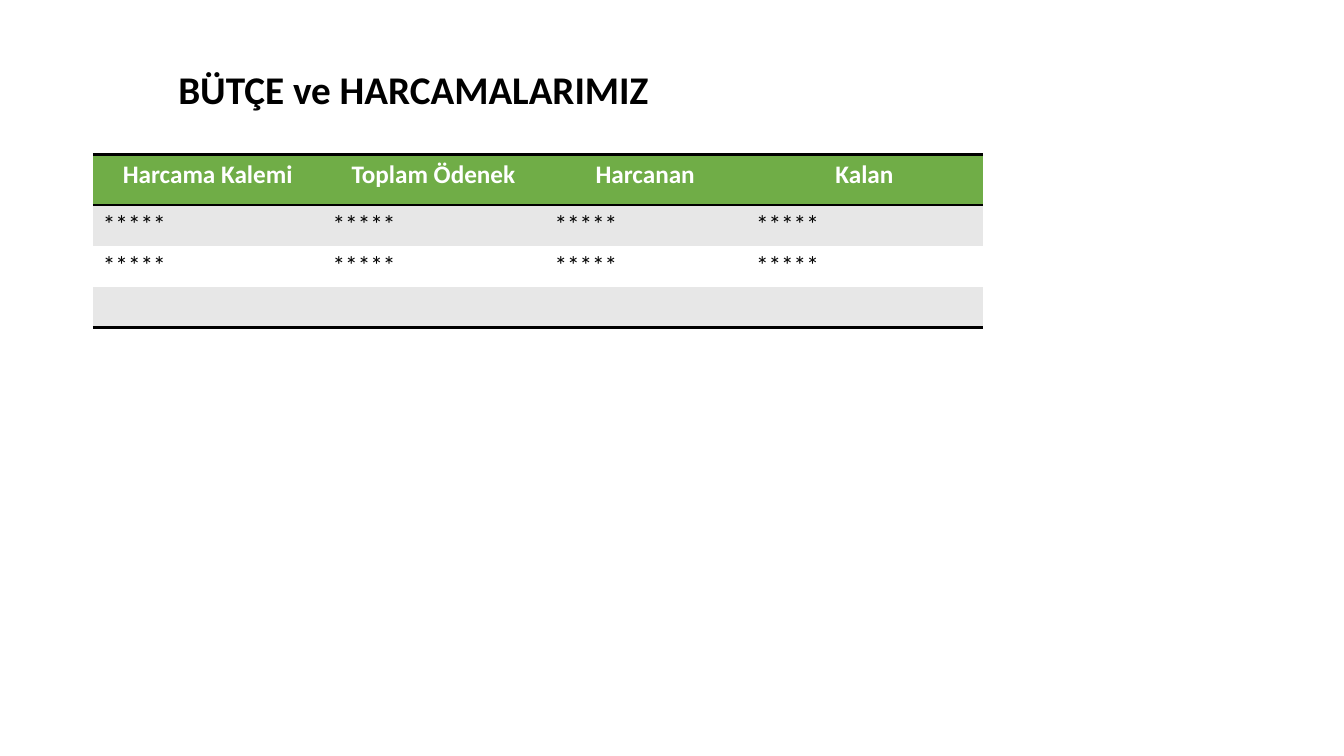
from lxml.etree import SubElement
from pptx import Presentation
from pptx.dml.color import RGBColor
from pptx.enum.text import MSO_ANCHOR, PP_ALIGN
from pptx.oxml.ns import qn
from pptx.util import Cm, Pt

BLACK = RGBColor(0x00, 0x00, 0x00)
WHITE = RGBColor(0xFF, 0xFF, 0xFF)
GREEN = RGBColor(0x70, 0xAD, 0x47)
GREY = RGBColor(0xE7, 0xE7, 0xE7)
FONT = "Calibri"


def set_font(p, size, color, bold):
    p.font.name = FONT
    p.font.size = Pt(size)
    p.font.bold = bold
    p.font.color.rgb = color


def set_border(cell, side, visible):
    ln = SubElement(cell._tc.get_or_add_tcPr(), qn(f"a:ln{side}"))
    if visible:
        ln.set("w", str(Pt(2)))
        fill = SubElement(ln, qn("a:solidFill"))
        SubElement(fill, qn("a:srgbClr")).set("val", str(BLACK))
    else:
        SubElement(ln, qn("a:noFill"))


prs = Presentation()
prs.slide_width = Cm(33.87)
prs.slide_height = Cm(19.05)
s = prs.slides.add_slide(prs.slide_layouts[5])

title = s.shapes.title
title.left, title.top = Cm(4.24), Cm(1.02)
title.width, title.height = Cm(20.52), Cm(2.59)
tf = title.text_frame
tf.text = "BÜTÇE ve HARCAMALARIMIZ"
tf.vertical_anchor = MSO_ANCHOR.MIDDLE
p = tf.paragraphs[0]
p.alignment = PP_ALIGN.LEFT
p.line_spacing = 0.9
set_font(p, 28, BLACK, True)

rows = [
    ["Harcama Kalemi", "Toplam Ödenek", "Harcanan", "Kalan"],
    ["*****"] * 4,
    ["*****"] * 4,
    [""] * 4,
]
col_widths = [5.79, 5.59, 5.08, 5.97]
row_heights = [1.27, 1.03, 1.03, 1.03]
row_fills = [GREEN, GREY, WHITE, GREY]
ruled_edges = {0, 1, len(rows)}

table = s.shapes.add_table(
    len(rows), len(col_widths), Cm(2.34), Cm(3.89),
    Cm(sum(col_widths)), Cm(sum(row_heights))).table
table.horz_banding = False
for column, width in zip(table.columns, col_widths):
    column.width = Cm(width)

for i, texts in enumerate(rows):
    table.rows[i].height = Cm(row_heights[i])
    header = i == 0
    for j, text in enumerate(texts):
        cell = table.cell(i, j)
        for side in "LR":
            set_border(cell, side, False)
        set_border(cell, "T", i in ruled_edges)
        set_border(cell, "B", i + 1 in ruled_edges)
        cell.fill.solid()
        cell.fill.fore_color.rgb = row_fills[i]
        cell.text = text
        p = cell.text_frame.paragraphs[0]
        p.alignment = PP_ALIGN.CENTER if header else PP_ALIGN.LEFT
        set_font(p, 18, WHITE if header else BLACK, header)

prs.save("out.pptx")
